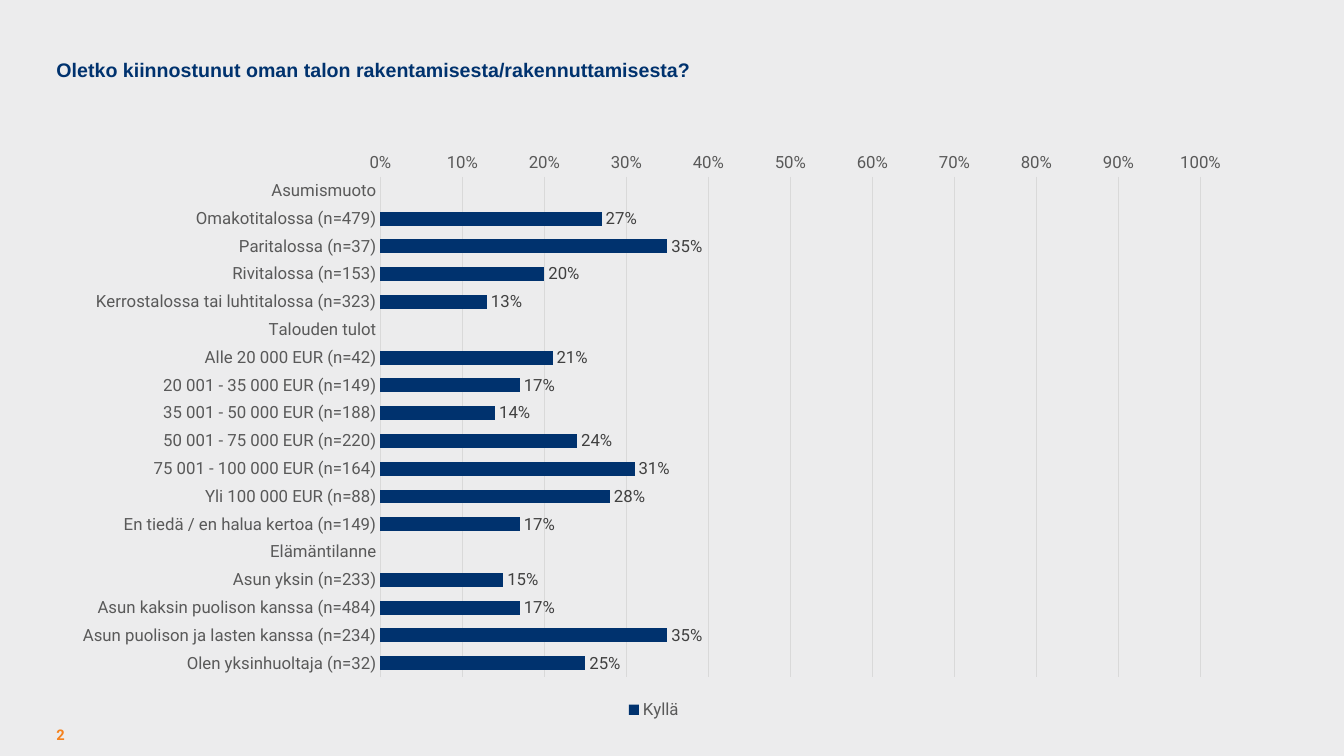
import pptx
import pptx.chart.data
import pptx.dml.color
import pptx.enum.chart
import pptx.enum.text
import pptx.oxml
import pptx.util
from pptx.util import Pt

COLORS = {
    "background": "ECECED",
    "navy": "00326E",
    "orange": "F5821E",
    "axis_text": "595959",
    "value_text": "404040",
    "grid": "D9D9D9",
}

ANSWERS = [
    ("Asumismuoto", None),
    ("Omakotitalossa (n=479)", 0.27),
    ("Paritalossa (n=37)", 0.35),
    ("Rivitalossa (n=153)", 0.20),
    ("Kerrostalossa tai luhtitalossa (n=323)", 0.13),
    ("Talouden tulot", None),
    ("Alle 20 000 EUR (n=42)", 0.21),
    ("20 001 - 35 000 EUR (n=149)", 0.17),
    ("35 001 - 50 000 EUR (n=188)", 0.14),
    ("50 001 - 75 000 EUR (n=220)", 0.24),
    ("75 001 - 100 000 EUR (n=164)", 0.31),
    ("Yli 100 000 EUR (n=88)", 0.28),
    ("En tiedä / en halua kertoa (n=149)", 0.17),
    ("Elämäntilanne", None),
    ("Asun yksin (n=233)", 0.15),
    ("Asun kaksin puolison kanssa (n=484)", 0.17),
    ("Asun puolison ja lasten kanssa (n=234)", 0.35),
    ("Olen yksinhuoltaja (n=32)", 0.25),
]


def rgb(name):
    return pptx.dml.color.RGBColor.from_string(COLORS[name])


def add_text(text, *, left, top, width, height, font, size, color,
             anchor=pptx.enum.text.MSO_ANCHOR.TOP, inset=0, line_spacing=1.0, wrap=True):
    box = slide.shapes.add_textbox(Pt(left), Pt(top), Pt(width), Pt(height))
    frame = box.text_frame
    frame.word_wrap = wrap
    frame.vertical_anchor = anchor
    frame.margin_left = frame.margin_right = 0
    frame.margin_top = frame.margin_bottom = Pt(inset)
    paragraph = frame.paragraphs[0]
    paragraph.line_spacing = line_spacing
    run = paragraph.add_run()
    run.text = text
    run.font.name = font
    run.font.size = Pt(size)
    run.font.bold = True
    run.font.color.rgb = rgb(color)


presentation = pptx.Presentation()
presentation.slide_width = Pt(960)
presentation.slide_height = Pt(540)
slide = presentation.slides.add_slide(presentation.slide_layouts[6])
slide.background.fill.solid()
slide.background.fill.fore_color.rgb = rgb("background")

# Page number and question
add_text("2", left=40.3, top=512, width=25, height=25, font="Roboto", size=10.5,
         color="orange", anchor=pptx.enum.text.MSO_ANCHOR.MIDDLE, inset=3.6)
add_text("Oletko kiinnostunut oman talon rakentamisesta/rakennuttamisesta?",
         left=40.3, top=44.6, width=879, height=17.3, font="Arial", size=14,
         color="navy", line_spacing=0.8, wrap=False)

# Share of yes answers by respondent group
survey = pptx.chart.data.CategoryChartData(number_format="0%")
survey.categories = [group for group, share in ANSWERS]
survey.add_series("Kyllä", [share for group, share in ANSWERS])
chart = slide.shapes.add_chart(
    pptx.enum.chart.XL_CHART_TYPE.BAR_CLUSTERED,
    Pt(42.5), Pt(101.5), Pt(849), Pt(415.5), survey).chart
chart.has_title = False
chart.font.name = "Roboto"
chart.font.size = Pt(10)
chart.has_legend = True
chart.legend.position = pptx.enum.chart.XL_LEGEND_POSITION.BOTTOM
chart.legend.include_in_layout = False

group_axis, share_axis = chart.category_axis, chart.value_axis
for axis in (group_axis, share_axis):
    axis.major_tick_mark = axis.minor_tick_mark = pptx.enum.chart.XL_TICK_MARK.NONE
group_axis.reverse_order = True
group_axis.has_major_gridlines = False
share_axis.minimum_scale = 0
share_axis.maximum_scale = 1
share_axis.major_unit = 0.1
share_axis.tick_labels.number_format = "0%"
share_axis.tick_labels.number_format_is_linked = False
share_axis.has_major_gridlines = True
share_axis.format.line.fill.background()
for line in (group_axis.format.line, share_axis.major_gridlines.format.line):
    line.color.rgb = rgb("grid")
    line.width = Pt(0.75)

plot = chart.plots[0]
plot.gap_width = 100
plot.vary_by_categories = False
yes_bars = plot.series[0]
yes_bars.format.fill.solid()
yes_bars.format.fill.fore_color.rgb = rgb("navy")
yes_labels = yes_bars.data_labels
yes_labels.show_value = True
yes_labels.position = pptx.enum.chart.XL_LABEL_POSITION.OUTSIDE_END
yes_labels.number_format = "0%"
yes_labels.number_format_is_linked = False

for font, color in (
    (group_axis.tick_labels.font, "axis_text"),
    (share_axis.tick_labels.font, "axis_text"),
    (chart.legend.font, "axis_text"),
    (yes_labels.font, "value_text"),
):
    font.name = "Roboto"
    font.size = Pt(12)
    font.color.rgb = rgb(color)

# Fixed plot area inside the chart frame
CHART_NS = "http://schemas.openxmlformats.org/drawingml/2006/chart"
plot_area = chart.element.find(f".//{{{CHART_NS}}}plotArea")
for layout in plot_area.findall(f"{{{CHART_NS}}}layout"):
    plot_area.remove(layout)
plot_area.insert(0, pptx.oxml.parse_xml(
    f'<c:layout xmlns:c="{CHART_NS}"><c:manualLayout><c:layoutTarget val="inner"/>'
    '<c:xMode val="edge"/><c:yMode val="edge"/>'
    '<c:x val="0.27"/><c:y val="0.06"/><c:w val="0.69"/><c:h val="0.86"/>'
    '</c:manualLayout></c:layout>'))

presentation.save("out.pptx")
